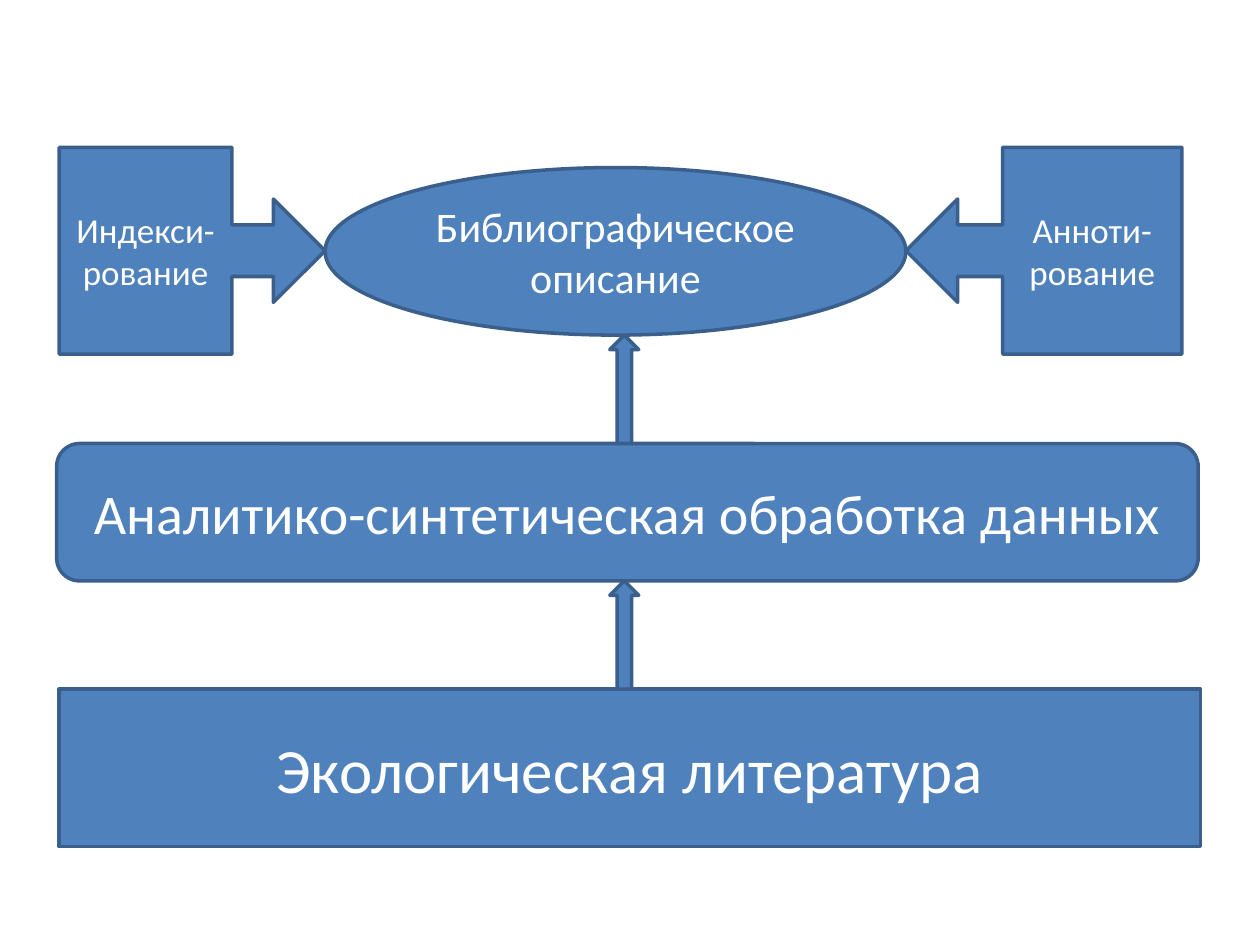
from dataclasses import dataclass

import pptx
import pptx.dml.color
import pptx.enum.shapes
import pptx.enum.text
import pptx.util

SHAPE = pptx.enum.shapes.MSO_SHAPE
FILL, LINE, TEXT = "4F81BD", "3A5F8C", "FFFFFF"
COLUMNS, ROWS = 100, 75  # the slide grid


@dataclass
class Block:
    kind: int
    left: float
    top: float
    width: float
    height: float
    text: str = ""
    size: int = 18

    @property
    def right(self) -> float:
        return self.left + self.width

    @property
    def bottom(self) -> float:
        return self.top + self.height


def colour(value: str) -> pptx.dml.color.RGBColor:
    return pptx.dml.color.RGBColor.from_string(value)


def rising_arrow(lower: Block, upper: Block) -> Block:
    """Arrow filling the gap from the lower block to the upper one."""
    return Block(SHAPE.UP_ARROW, 48.4, upper.bottom, 2.3, lower.top - upper.bottom)


def draw(deck, page, block: Block) -> None:
    column, row = deck.slide_width / COLUMNS, deck.slide_height / ROWS
    box = page.shapes.add_shape(
        block.kind,
        round(block.left * column), round(block.top * row),
        round(block.width * column), round(block.height * row),
    )
    box.shadow.inherit = False
    box.fill.solid()
    box.fill.fore_color.rgb = colour(FILL)
    box.line.color.rgb = colour(LINE)
    box.line.width = pptx.util.Pt(2)
    if not block.text:
        return
    frame = box.text_frame
    frame.word_wrap = True
    frame.vertical_anchor = pptx.enum.text.MSO_ANCHOR.MIDDLE
    para = frame.paragraphs[0]
    para.alignment = pptx.enum.text.PP_ALIGN.CENTER
    span = para.add_run()
    span.text = block.text
    span.font.name = "Calibri"
    span.font.size = pptx.util.Pt(block.size)
    span.font.color.rgb = colour(TEXT)


def main() -> None:
    deck = pptx.Presentation()
    deck.slide_width = pptx.util.Inches(10)
    deck.slide_height = pptx.util.Inches(7.5)
    page = deck.slides.add_slide(deck.slide_layouts[6])

    # Three levels, from the bottom up
    literature = Block(SHAPE.RECTANGLE, 4.7, 54.7, 90.6, 12.5,
                       "Экологическая литература", 36)
    processing = Block(SHAPE.ROUNDED_RECTANGLE, 4.5, 35.2, 90.6, 10.9,
                       "Аналитико-синтетическая обработка данных", 32)
    description = Block(SHAPE.OVAL, 25.8, 13.3, 46.1, 13.3,
                        "Библиографическое описание", 24)

    # Callouts that point at the ellipse from both sides
    indexing = Block(SHAPE.RIGHT_ARROW_CALLOUT, literature.left, 11.7,
                     description.left - literature.left, 16.4,
                     "Индекси-рование", 20)
    annotation = Block(SHAPE.LEFT_ARROW_CALLOUT, description.right, indexing.top,
                       21.9, indexing.height, "Анноти-рование", 20)

    for block in (
        literature, rising_arrow(literature, processing),
        processing, rising_arrow(processing, description),
        description, indexing, annotation,
    ):
        draw(deck, page, block)

    deck.save("out.pptx")


if __name__ == "__main__":
    main()
